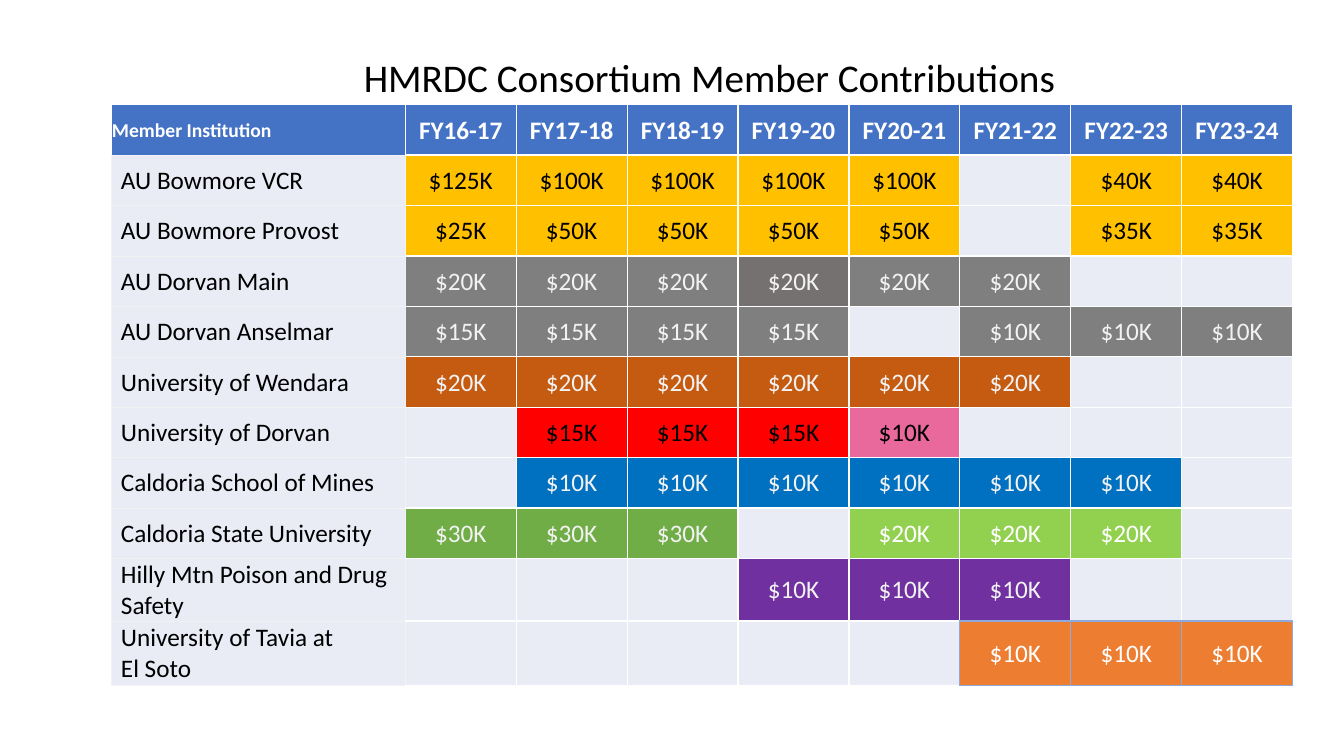
from lxml import etree
from pptx import Presentation
from pptx.dml.color import RGBColor
from pptx.enum import text
from pptx.oxml import ns
from pptx.util import Inches, Pt

WHITE, BLACK = RGBColor(255, 255, 255), RGBColor(0, 0, 0)
PALE, MIST = RGBColor(0xF2, 0xF2, 0xF2), RGBColor(0xE9, 0xEB, 0xF5)
HEADER, GOLD = RGBColor(0x44, 0x72, 0xC4), RGBColor(0xFF, 0xC0, 0x00)
GRAY, WARM_GRAY = RGBColor(0x7F, 0x7F, 0x7F), RGBColor(0x76, 0x71, 0x71)
RUST, RED = RGBColor(0xC5, 0x5A, 0x11), RGBColor(0xFF, 0x00, 0x00)
PINK, BLUE = RGBColor(0xE9, 0x69, 0x9D), RGBColor(0x00, 0x70, 0xC0)
GREEN, LIME = RGBColor(0x70, 0xAD, 0x47), RGBColor(0x92, 0xD0, 0x50)
PURPLE, ORANGE = RGBColor(0x70, 0x30, 0xA0), RGBColor(0xED, 0x7D, 0x31)
PERIWINKLE = RGBColor(0x8E, 0xA9, 0xDB)

TITLE = "HMRDC Consortium Member Contributions"
HEADINGS = ["Member Institution"] + [f"FY{y}-{y + 1}" for y in range(16, 24)]
# Each span: first year column, fill, text colour, amounts in $K
MEMBERS = [
    ("AU Bowmore VCR", [(1, GOLD, BLACK, [125, 100, 100, 100, 100]), (7, GOLD, BLACK, [40, 40])]),
    ("AU Bowmore Provost", [(1, GOLD, BLACK, [25, 50, 50, 50, 50]), (7, GOLD, BLACK, [35, 35])]),
    ("AU Dorvan Main", [(1, GRAY, PALE, [20] * 3), (4, WARM_GRAY, PALE, [20]),
                        (5, GRAY, PALE, [20] * 2)]),
    ("AU Dorvan Anselmar", [(1, GRAY, PALE, [15] * 4), (6, GRAY, PALE, [10] * 3)]),
    ("University of Wendara", [(1, RUST, PALE, [20] * 6)]),
    ("University of Dorvan", [(2, RED, BLACK, [15] * 3), (5, PINK, BLACK, [10])]),
    ("Caldoria School of Mines", [(2, BLUE, PALE, [10] * 6)]),
    ("Caldoria State University", [(1, GREEN, PALE, [30] * 3), (5, LIME, WHITE, [20] * 3)]),
    ("Hilly Mtn Poison and Drug Safety", [(4, PURPLE, PALE, [10] * 3)]),
    ("University of Tavia at\vEl Soto", [(6, ORANGE, WHITE, [10] * 3)]),
]
COL_WIDTHS = [2.92] + [1.1] * 8
ROW_HEIGHTS = [0.5] * 9 + [0.59, 0.64]
LAST_ROW, FIRST_OUTLINED = len(MEMBERS), 6


def format_text(p, **values):
    """Apply font values to every run of a paragraph."""
    color = values.pop("color")
    for r in p.runs:
        for name, value in values.items():
            setattr(r.font, name, value)
        r.font.color.rgb = color


def cell_borders(row, col):
    """Return the colour and width of each side of a cell."""
    sides = dict.fromkeys("LRTB", (WHITE, 1))
    if row == 0:
        sides["B"] = (WHITE, 1.5) if col else (PALE, 0.5)
    elif col == 0:
        sides = dict.fromkeys("LRTB", (PALE, 0.5))
    elif col == 1:
        sides["L"] = (PALE, 0.5)
    if row == 1 and col:
        sides["T"] = (WHITE, 1.5)
    if row == LAST_ROW and col >= FIRST_OUTLINED:
        sides = dict.fromkeys("LRTB", (PERIWINKLE, 1))
    elif row == LAST_ROW and col == FIRST_OUTLINED - 1:
        sides["R"] = (PERIWINKLE, 1)
    elif row == LAST_ROW - 1 and col >= FIRST_OUTLINED:
        sides["B"] = (PERIWINKLE, 1)
    return sides


def format_cell(cell, row, col, fill, label="", color=BLACK):
    """Fill one table cell with its borders, colour and label."""
    tc_pr = cell._tc.get_or_add_tcPr()
    for side, (line_color, width) in cell_borders(row, col).items():
        ln = etree.SubElement(tc_pr, ns.qn(f"a:ln{side}"), w=str(Pt(width)))
        solid = etree.SubElement(ln, ns.qn("a:solidFill"))
        etree.SubElement(solid, ns.qn("a:srgbClr"), val=str(line_color))
    cell.fill.solid()
    cell.fill.fore_color.rgb = fill
    left = 0.1 if row and not col else 0.01
    settings = {"margin_left": Inches(left), "margin_right": Inches(0.01),
                "margin_top": Inches(0.01), "margin_bottom": 0,
                "vertical_anchor": text.MSO_ANCHOR.MIDDLE}
    for name, value in settings.items():
        setattr(cell, name, value)
    p = cell.text_frame.paragraphs[0]
    p.text = label
    p.alignment = text.PP_ALIGN.CENTER if col else text.PP_ALIGN.LEFT
    format_text(p, name="Calibri", size=Pt(18 if row or col else 14), bold=row == 0, color=color)


def add_title(s):
    """Place the title and drop the unused subtitle."""
    title = s.shapes.title
    subtitle = s.placeholders[1]._element
    subtitle.getparent().remove(subtitle)
    title.left, title.top, title.width, title.height = map(Inches, (1.44, 0.19, 11.19, 0.86))
    tf = title.text_frame
    tf.word_wrap = True
    tf.vertical_anchor = text.MSO_ANCHOR.BOTTOM
    p = tf.paragraphs[0]
    p.text = TITLE
    p.alignment = text.PP_ALIGN.CENTER
    p.line_spacing = 0.9
    format_text(p, name="Calibri", size=Pt(28), color=BLACK)


def add_contributions(s):
    """Add the table of yearly member contributions."""
    table = s.shapes.add_table(len(ROW_HEIGHTS), len(COL_WIDTHS), Inches(1.1), Inches(1.04),
                               Inches(sum(COL_WIDTHS)), Inches(sum(ROW_HEIGHTS))).table
    table.horz_banding = False
    for column, width in zip(table.columns, COL_WIDTHS):
        column.width = Inches(width)
    for table_row, height in zip(table.rows, ROW_HEIGHTS):
        table_row.height = Inches(height)
    for col, heading in enumerate(HEADINGS):
        format_cell(table.cell(0, col), 0, col, HEADER, heading, WHITE)
    for row, (member, spans) in enumerate(MEMBERS, 1):
        contents = {0: (MIST, member, BLACK)}
        for first, fill, color, amounts in spans:
            for col, amount in enumerate(amounts, first):
                contents[col] = (fill, f"${amount}K", color)
        for col in range(len(HEADINGS)):
            format_cell(table.cell(row, col), row, col, *contents.get(col, (MIST,)))


def main():
    """Build and save the slide."""
    prs = Presentation()
    prs.slide_width, prs.slide_height = Inches(13.33), Inches(7.5)
    s = prs.slides.add_slide(prs.slide_layouts[0])
    add_title(s)
    add_contributions(s)
    prs.save("out.pptx")


if __name__ == "__main__":
    main()
